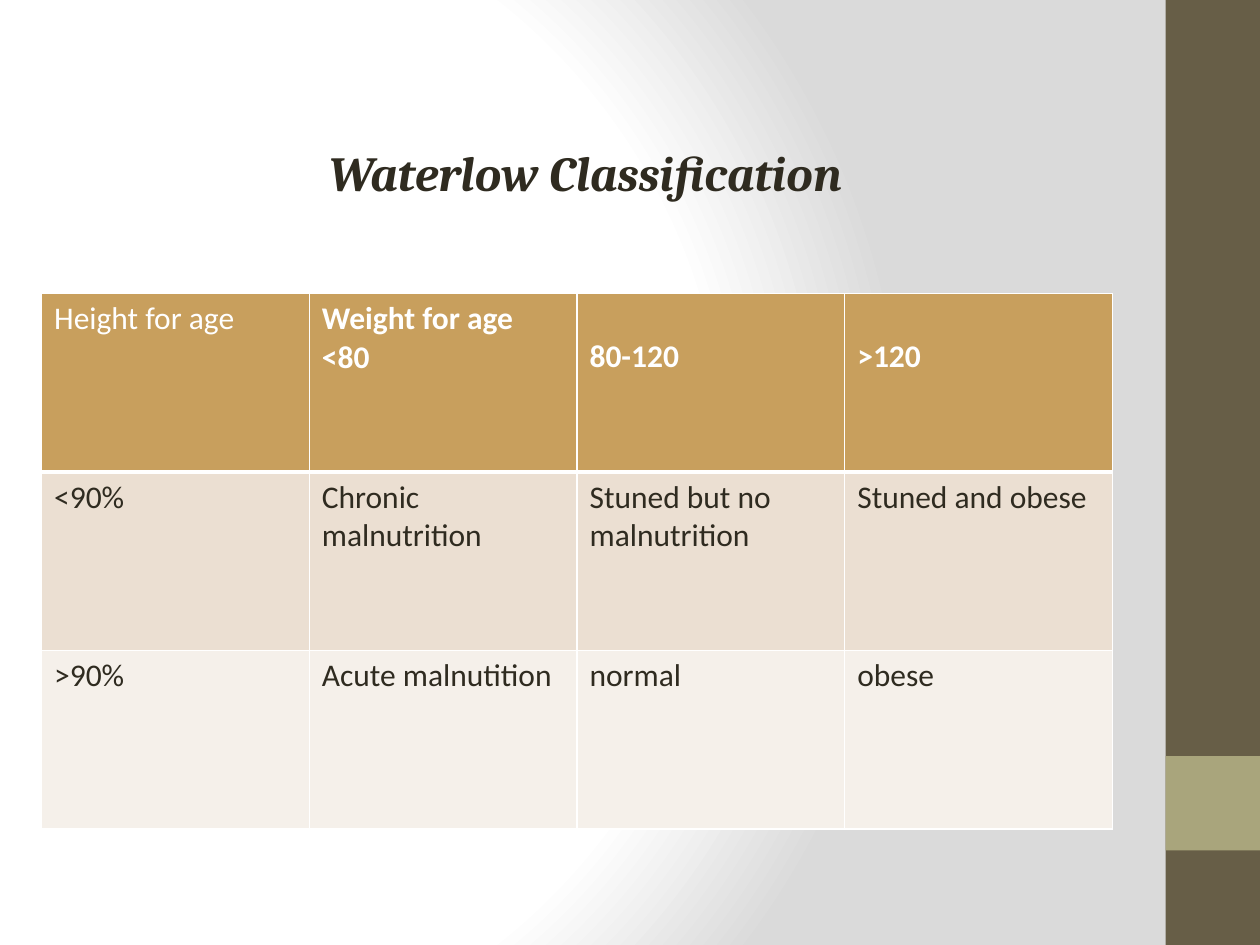
from lxml import etree
from pptx import Presentation
from pptx import util as u
from pptx.dml.color import RGBColor
from pptx.enum import shapes, text
from pptx.oxml import ns

COLORS = {
    "white": "FFFFFF",
    "shade": "DADADA",
    "bar": "675E47",
    "accent": "A9A57C",
    "ink": "2F2B20",
    "header": "C89F5D",
    "band_dark": "EBDFD2",
    "band_light": "F5F0EA",
}
HEADER = ["Height for age", "Weight for age\n<80", "80-120", ">120"]
BODY = [
    ["<90%", "Chronic malnutrition", "Stuned but no malnutrition", "Stuned and obese"],
    [">90%", "Acute malnutition", "normal", "obese"],
]
LINE_DROP = 0.3


def color(name):
    return RGBColor.from_string(COLORS[name])


def add_element(parent, tag, **attributes):
    element = etree.SubElement(parent, ns.qn(tag))
    for name, value in attributes.items():
        element.set(name, str(value))
    return element


def write(frame, content, font="Calibri", size=18, ink="ink", bold=False,
          italic=False, align=text.PP_ALIGN.LEFT):
    frame.word_wrap = True
    for index, line in enumerate(content.split("\n")):
        para = frame.add_paragraph() if index else frame.paragraphs[0]
        para.alignment = align
        span = para.add_run()
        span.text = line
        span.font.name = font
        span.font.size = u.Pt(size)
        span.font.bold = bold
        span.font.italic = italic
        span.font.color.rgb = color(ink)


class SlideBuilder:
    def __init__(self, deck):
        self.page = deck.slides.add_slide(deck.slide_layouts[5])

    def background(self, stops, focus):
        fill = self.page.background.fill
        fill.gradient()
        gradient = self.page.background._cSld.find(".//" + ns.qn("a:gradFill"))
        for child in list(gradient):
            gradient.remove(child)
        stop_list = add_element(gradient, "a:gsLst")
        for position, name in stops:
            stop = add_element(stop_list, "a:gs", pos=position * 1000)
            add_element(stop, "a:srgbClr", val=COLORS[name])
        path = add_element(gradient, "a:path", path="circle")
        add_element(path, "a:fillToRect",
                    **{side: value * 1000 for side, value in focus.items()})

    def block(self, left, top, width, height, fill):
        box = self.page.shapes.add_shape(
            shapes.MSO_SHAPE.RECTANGLE, u.Inches(left), u.Inches(top),
            u.Inches(width), u.Inches(height))
        box.shadow.inherit = False
        box.fill.solid()
        box.fill.fore_color.rgb = color(fill)
        box.line.fill.background()

    def title(self, content, left, top, width, height):
        box = self.page.shapes.title
        box.left, box.top = u.Inches(left), u.Inches(top)
        box.width, box.height = u.Inches(width), u.Inches(height)
        frame = box.text_frame
        frame.auto_size = text.MSO_AUTO_SIZE.NONE
        frame.vertical_anchor = text.MSO_ANCHOR.TOP
        frame.margin_left = u.Inches(0.22)
        write(frame, content, font="Cambria", size=28, bold=True, italic=True,
              align=text.PP_ALIGN.CENTER)

    def cell(self, cell, content, fill, bottom=1, drop=0, **style):
        cell.margin_top = u.Inches(0.05 + drop)
        write(cell.text_frame, content, **style)
        properties = cell._tc.get_or_add_tcPr()
        for side, width in (("L", 1), ("R", 1), ("T", 1), ("B", bottom)):
            line = add_element(properties, "a:ln" + side, w=u.Pt(width))
            solid = add_element(line, "a:solidFill")
            add_element(solid, "a:srgbClr", val=COLORS["white"])
        cell.fill.solid()
        cell.fill.fore_color.rgb = color(fill)

    def table(self, header, body, left, top, width, height):
        grid = self.page.shapes.add_table(
            len(body) + 1, len(header), u.Inches(left), u.Inches(top),
            u.Inches(width), u.Inches(height)).table
        for column, content in enumerate(header):
            self.cell(grid.cell(0, column), content, "header", bottom=3,
                      drop=LINE_DROP if column > 1 else 0,
                      ink="white", bold=column > 0)
        for row, (contents, fill) in enumerate(zip(body, ("band_dark", "band_light")), 1):
            for column, content in enumerate(contents):
                self.cell(grid.cell(row, column), content, fill)


def main():
    deck = Presentation()
    deck.slide_width, deck.slide_height = u.Inches(10), u.Inches(7.5)
    builder = SlideBuilder(deck)
    builder.background([(0, "white"), (75, "white"), (100, "shade")],
                       {"l": 20, "t": 50, "r": 100, "b": 50})
    builder.block(9.25, 0, 0.75, 7.5, "bar")
    builder.block(9.25, 6, 0.75, 0.75, "accent")
    builder.title("Waterlow Classification", 0.42, 1.08, 8.33, 6)
    builder.table(HEADER, BODY, 0.33, 2.33, 8.5, 4.25)
    deck.save("out.pptx")


if __name__ == "__main__":
    main()
